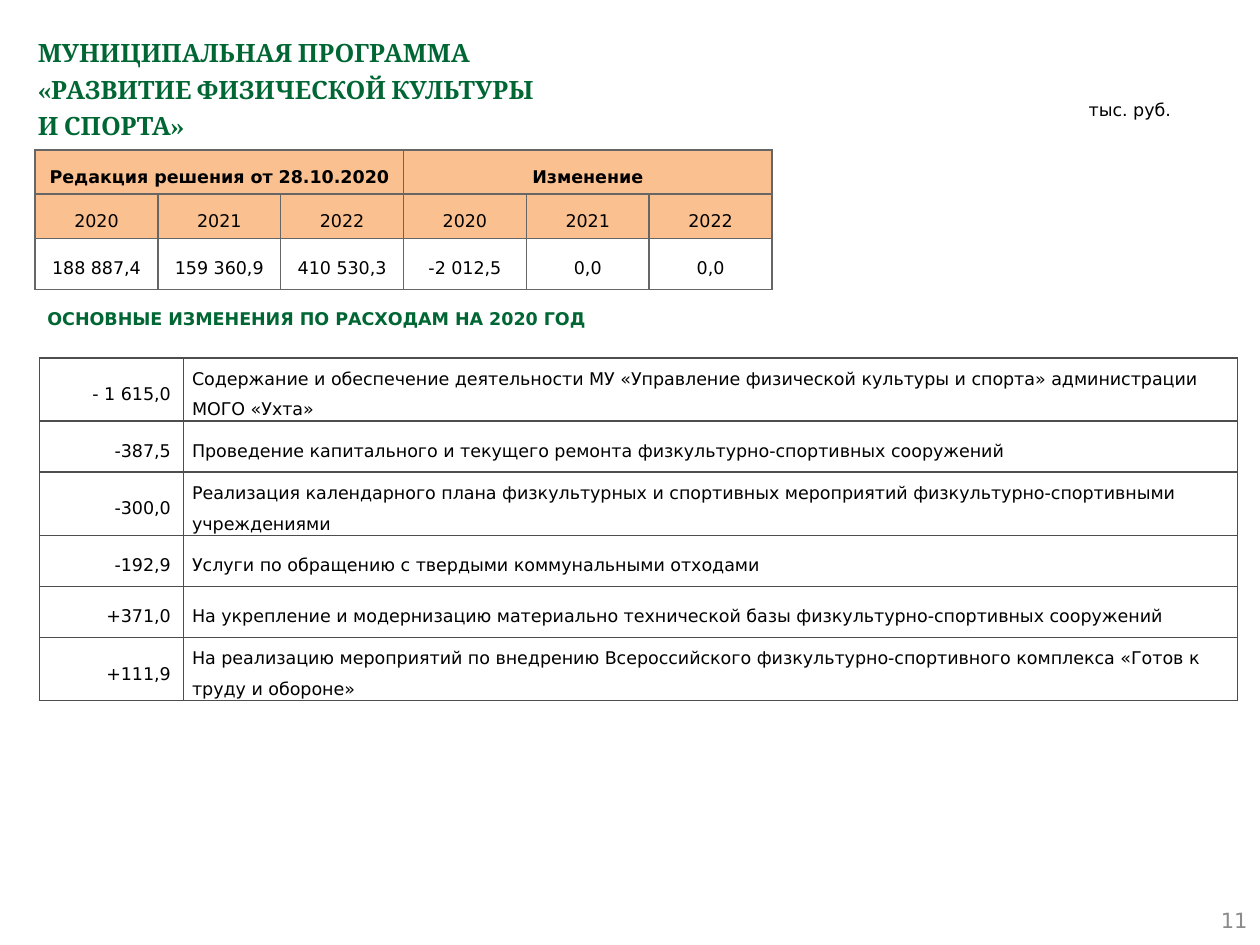
"""Builds the budget slide on the physical culture and sport programme."""
import copy

import pptx
import pptx.dml.color
import pptx.enum.shapes
import pptx.enum.text
import pptx.oxml
import pptx.oxml.ns
import pptx.util

Pt = pptx.util.Pt
ALIGN = pptx.enum.text.PP_ALIGN
ANCHOR = pptx.enum.text.MSO_ANCHOR

COLORS = {
    "heading": "006633",
    "text": "000000",
    "page": "8C8C8C",
    "header": "FAC090",
    "budget_border": "666666",
    "changes_border": "4D4D4D",
}
TITLE = "МУНИЦИПАЛЬНАЯ ПРОГРАММА\v«РАЗВИТИЕ ФИЗИЧЕСКОЙ КУЛЬТУРЫ\vИ СПОРТА»"
UNIT = "тыс. руб."
SUBHEADING = "ОСНОВНЫЕ ИЗМЕНЕНИЯ ПО РАСХОДАМ НА 2020 ГОД"
PAGE = "11"
BUDGET_GROUPS = ["Редакция решения от 28.10.2020", "Изменение"]
YEARS = ["2020", "2021", "2022"]
AMOUNTS = ["188 887,4", "159 360,9", "410 530,3", "-2 012,5", "0,0", "0,0"]
CHANGES = [
    ("- 1 615,0", "Содержание и обеспечение деятельности МУ «Управление физической культуры и спорта» администрации МОГО «Ухта»"),
    ("-387,5", "Проведение капитального и текущего ремонта физкультурно-спортивных сооружений"),
    ("-300,0", "Реализация календарного плана физкультурных и спортивных мероприятий физкультурно-спортивными учреждениями"),
    ("-192,9", "Услуги по обращению с твердыми коммунальными отходами"),
    ("+371,0", "На укрепление и модернизацию материально технической базы физкультурно-спортивных сооружений"),
    ("+111,9", "На реализацию мероприятий по внедрению Всероссийского физкультурно-спортивного комплекса «Готов к труду и обороне»"),
]


def rgb(name):
    return pptx.dml.color.RGBColor.from_string(COLORS[name])


def write(frame, text, size=10, font="DejaVu Sans", color="text", bold=False,
          align=ALIGN.LEFT, spacing=1.0, after=0):
    frame.word_wrap = True
    paragraph = frame.paragraphs[0]
    paragraph.text = text
    paragraph.alignment = align
    paragraph.line_spacing = spacing
    paragraph.space_before = Pt(0)
    paragraph.space_after = Pt(after)
    for run in paragraph.runs:
        run.font.size = Pt(size)
        run.font.name = font
        run.font.bold = bold
        run.font.color.rgb = rgb(color)
    for line_break in paragraph._p.findall(pptx.oxml.ns.qn("a:br")):
        line_break.append(copy.deepcopy(paragraph.runs[0]._r.rPr))


def add_label(slide, text, box, anchor=ANCHOR.TOP, **style):
    label = slide.shapes.add_textbox(*map(Pt, box))
    label.text_frame.vertical_anchor = anchor
    write(label.text_frame, text, **style)


def add_grid(slide, left, top, widths, heights):
    frame = slide.shapes.add_table(len(heights), len(widths), Pt(left), Pt(top),
                                   Pt(sum(widths)), Pt(sum(heights)))
    grid = frame.table
    grid.first_row = grid.horz_banding = False
    for column, width in zip(grid.columns, widths):
        column.width = Pt(width)
    for row, height in zip(grid.rows, heights):
        row.height = Pt(height)
    return grid


def format_cell(cell, border, fill=None, insets=None):
    cell.vertical_anchor = ANCHOR.MIDDLE
    if insets:
        cell.margin_left = cell.margin_right = Pt(insets[0])
        cell.margin_top = cell.margin_bottom = Pt(insets[1])
    if fill:
        cell.fill.solid()
        cell.fill.fore_color.rgb = rgb(fill)
    else:
        cell.fill.background()
    properties = cell._tc.get_or_add_tcPr()
    for index, side in enumerate("LRTB"):
        properties.insert(index, pptx.oxml.parse_xml(
            f'<a:ln{side} {pptx.oxml.ns.nsdecls("a")} w="{Pt(1)}"><a:solidFill>'
            f'<a:srgbClr val="{COLORS[border]}"/></a:solidFill></a:ln{side}>'))


def add_budget(slide):
    count = len(YEARS)
    grid = add_grid(slide, 20, 85.7, [70.2] * len(AMOUNTS), [21.6, 21.6, 29.2])
    for cell in grid.iter_cells():
        format_cell(cell, "budget_border", insets=(3.6, 3.6))
    for group, heading in enumerate(BUDGET_GROUPS):
        first = group * count
        grid.cell(0, first).merge(grid.cell(0, first + count - 1))
        write(grid.cell(0, first).text_frame, heading, bold=True,
              align=ALIGN.CENTER, spacing=1.5)
    for row, values in enumerate([YEARS * len(BUDGET_GROUPS), AMOUNTS], start=1):
        for column, value in enumerate(values):
            write(grid.cell(row, column).text_frame, value,
                  align=ALIGN.CENTER, spacing=1.5)
    for row in range(2):
        for column in range(len(AMOUNTS)):
            fill = grid.cell(row, column).fill
            fill.solid()
            fill.fore_color.rgb = rgb("header")


def add_changes(slide):
    grid = add_grid(slide, 22.6, 204.5, [82.2, 602.4], [29.2] * len(CHANGES))
    for row, (amount, purpose) in enumerate(CHANGES):
        amount_cell, purpose_cell = grid.cell(row, 0), grid.cell(row, 1)
        format_cell(amount_cell, "changes_border")
        format_cell(purpose_cell, "changes_border", insets=(5, 0))
        write(amount_cell.text_frame, amount, align=ALIGN.RIGHT, spacing=1.5)
        write(purpose_cell.text_frame, purpose, spacing=1.5, after=10)


def add_subheading(slide):
    banner = slide.shapes.add_shape(pptx.enum.shapes.MSO_SHAPE.PENTAGON,
                                    Pt(20), Pt(166.3), Pt(354.2), Pt(31))
    banner.adjustments[0] = 0
    banner.shadow.inherit = False
    banner.fill.background()
    banner.line.fill.background()
    banner.text_frame.vertical_anchor = ANCHOR.MIDDLE
    write(banner.text_frame, SUBHEADING, color="heading", bold=True)


def main():
    deck = pptx.Presentation()
    deck.slide_width, deck.slide_height = Pt(720), Pt(540)
    slide = deck.slides.add_slide(deck.slide_layouts[5])
    title = slide.shapes.title
    title.left, title.top, title.width, title.height = map(Pt, (14.4, 14.4, 692, 57))
    title.text_frame.vertical_anchor = ANCHOR.TOP
    title.text_frame.auto_size = pptx.enum.text.MSO_AUTO_SIZE.NONE
    write(title.text_frame, TITLE, size=14.4, font="Cambria", color="heading",
          bold=True, spacing=1.2)
    add_label(slide, PAGE, (552, 511, 168, 29), anchor=ANCHOR.MIDDLE, size=12,
              color="page", align=ALIGN.RIGHT)
    add_subheading(slide)
    add_changes(slide)
    add_label(slide, UNIT, (615, 50.4, 72.7, 21.6), spacing=1.2)
    add_budget(slide)
    deck.save("out.pptx")


if __name__ == "__main__":
    main()
